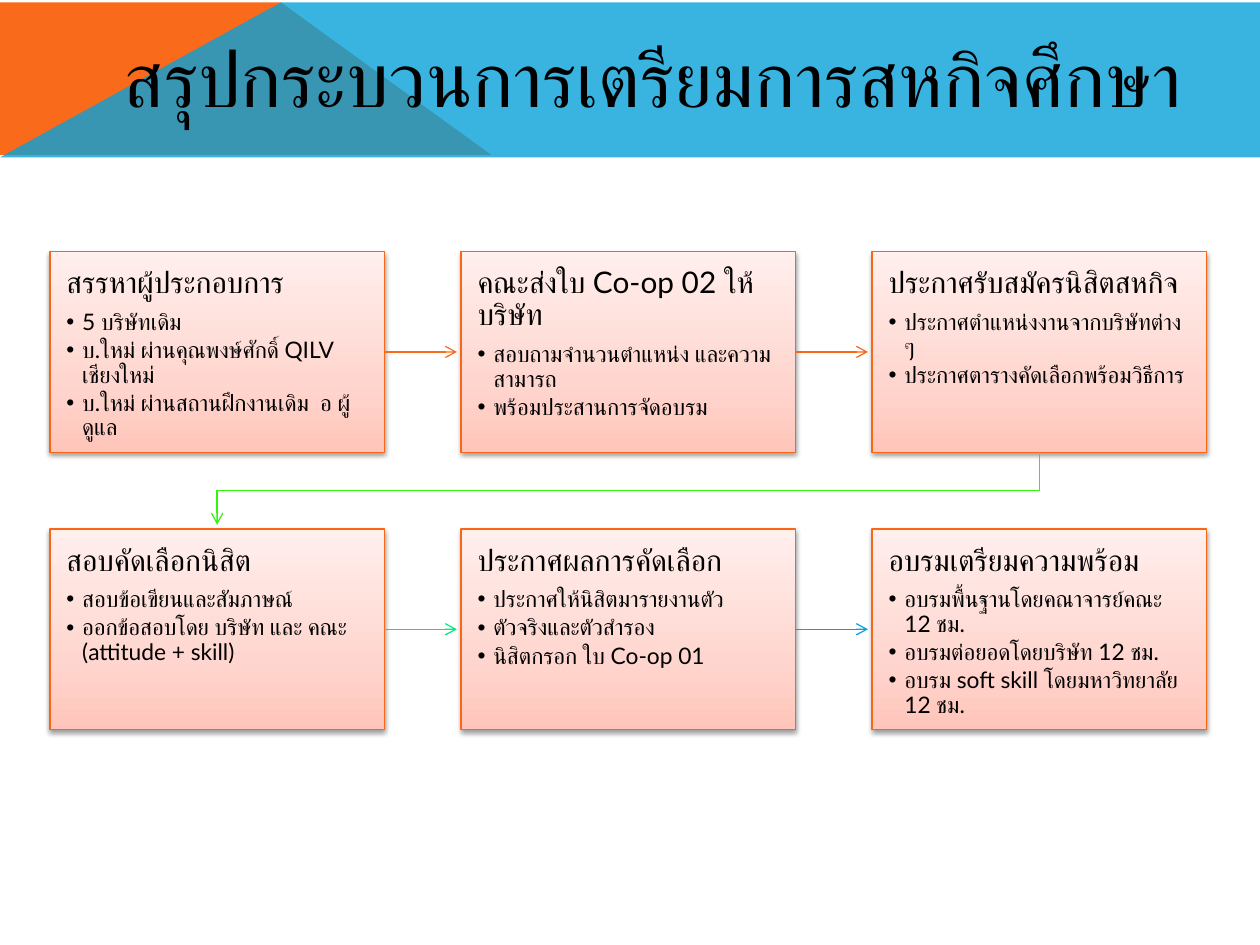
from lxml.etree import SubElement
from pptx import Presentation
from pptx.dml.color import RGBColor
from pptx.enum.shapes import MSO_CONNECTOR as Connector, MSO_SHAPE as Shape
from pptx.enum.text import MSO_ANCHOR as Anchor, PP_ALIGN as Align
from pptx.oxml.ns import qn
from pptx.util import Pt

RIGHT_SIDE = 3
LEFT, TOP, WIDTH, HEIGHT = 28.6, 143.8, 191, 114.6
COLUMN_STEP, ROW_STEP = 234.9, 158.5
ARROW_LENGTH = 41.5
GRADIENT = [(0, "FFC5BA"), (35, "FFD6CF"), (100, "FFEFED")]
HEADING_FORMAT = {"size": Pt(17), "name": "Lato"}
BULLET_FORMAT = {"size": Pt(13), "name": "Lato"}
TITLE_FORMAT = {"size": Pt(44), "name": "Lato"}
HEADING_SPACING = {"line_spacing": 0.9, "space_after": Pt(6), "alignment": Align.LEFT}
BULLET_SPACING = {"line_spacing": 0.9, "space_after": Pt(2), "alignment": Align.LEFT}
BOX_FRAME = {
    "word_wrap": True, "vertical_anchor": Anchor.TOP,
    "margin_left": Pt(9.4), "margin_right": Pt(9.4),
    "margin_top": Pt(9.4), "margin_bottom": Pt(9.4),
}

# Heading, bullets, and the colour of the arrow to the next step
STEPS = [
    ("สรรหาผู้ประกอบการ",
     ["5 บริษัทเดิม",
      "บ.ใหม่ ผ่านคุณพงษ์ศักดิ์ QILV เชียงใหม่",
      "บ.ใหม่ ผ่านสถานฝึกงานเดิม  อ ผู้ดูแล"], "F96A1B"),
    ("คณะส่งใบ Co-op 02 ให้บริษัท",
     ["สอบถามจำนวนตำแหน่ง และความสามารถ",
      "พร้อมประสานการจัดอบรม"], "F96615"),
    ("ประกาศรับสมัครนิสิตสหกิจ",
     ["ประกาศตำแหน่งงานจากบริษัทต่าง ๆ",
      "ประกาศตารางคัดเลือกพร้อมวิธีการ"], "34F308"),
    ("สอบคัดเลือกนิสิต",
     ["สอบข้อเขียนและสัมภาษณ์",
      "ออกข้อสอบโดย บริษัท และ คณะ (attitude + skill)"], "08E680"),
    ("ประกาศผลการคัดเลือก",
     ["ประกาศให้นิสิตมารายงานตัว",
      "ตัวจริงและตัวสำรอง",
      "นิสิตกรอก ใบ Co-op 01"], "08A1D9"),
    ("อบรมเตรียมความพร้อม",
     ["อบรมพื้นฐานโดยคณาจารย์คณะ 12 ชม.",
      "อบรมต่อยอดโดยบริษัท 12 ชม.",
      "อบรม soft skill โดยมหาวิทยาลัย 12 ชม."], None),
]


def color(value):
    return RGBColor.from_string(value)


def write(para, text, spacing, font_format):
    """Fill a paragraph with one black span in the given formats."""
    for name, value in spacing.items():
        setattr(para, name, value)
    span = para.add_run()
    span.text = text
    for name, value in font_format.items():
        setattr(span.font, name, value)
    span.font.color.rgb = color("000000")


deck = Presentation()
deck.slide_width, deck.slide_height = Pt(720), Pt(540)
page = deck.slides.add_slide(deck.slide_layouts[6])
shapes = page.shapes

# Header band: orange wedge under a translucent blue sheet
bands = [
    ("F96A1B", [(0, 88.6), (0, 1.4), (160.6, 1.4), (280.8, 88.6)]),
    ("08A1D9", [(0, 90), (160.6, 1.4), (720, 1.4), (720, 90)]),
]
for fill, points in bands:
    corners = [(Pt(x), Pt(y)) for x, y in points]
    builder = shapes.build_freeform(*corners[0], scale=1.0)
    builder.add_line_segments(corners[1:], close=True)
    band = builder.convert_to_shape()
    band.shadow.inherit = False
    band.fill.solid()
    band.fill.fore_color.rgb = color(fill)
    band.line.fill.background()
sheet_color = band.element.spPr.find(qn("a:solidFill")).find(qn("a:srgbClr"))
SubElement(sheet_color, qn("a:alpha"), val="80000")

# Step boxes, each followed by the arrow to the next one
for index, (heading, bullets, arrow_color) in enumerate(STEPS):
    row, column = divmod(index, 3)
    left, top = LEFT + column * COLUMN_STEP, TOP + row * ROW_STEP
    box = shapes.add_shape(Shape.RECTANGLE, Pt(left), Pt(top), Pt(WIDTH), Pt(HEIGHT))
    box.line.color.rgb = color("F96615")
    box.line.width = Pt(0.75)
    box.fill.gradient()
    box.fill.gradient_angle = 90
    stops = box.element.spPr.find(qn("a:gradFill")).find(qn("a:gsLst"))
    stops.clear()
    for position, stop_color in GRADIENT:
        stop = SubElement(stops, qn("a:gs"), pos=str(position * 1000))
        SubElement(stop, qn("a:srgbClr"), val=stop_color)
    box.shadow.inherit = False
    shadow = SubElement(box.element.spPr.find(qn("a:effectLst")), qn("a:outerShdw"),
                        blurRad=str(Pt(3.1)), dist=str(Pt(1.6)), dir="5400000", rotWithShape="0")
    shadow_color = SubElement(shadow, qn("a:srgbClr"), val="000000")
    SubElement(shadow_color, qn("a:alpha"), val="38000")

    frame = box.text_frame
    for name, value in BOX_FRAME.items():
        setattr(frame, name, value)
    write(frame.paragraphs[0], heading, HEADING_SPACING, HEADING_FORMAT)
    for bullet in bullets:
        para = frame.add_paragraph()
        para.level = 1
        write(para, bullet, BULLET_SPACING, BULLET_FORMAT)
        settings = para._p.get_or_add_pPr()
        settings.set("marL", str(Pt(9)))
        settings.set("indent", str(-Pt(9)))
        SubElement(settings, qn("a:buFont"), typeface="Arial")
        SubElement(settings, qn("a:buChar"), char="•")

    if arrow_color is None:
        continue
    if column < 2:
        start, middle = left + WIDTH, top + HEIGHT / 2
        arrow = shapes.add_connector(Connector.STRAIGHT, Pt(start), Pt(middle),
                                     Pt(start + ARROW_LENGTH), Pt(middle))
        arrow.begin_connect(box, RIGHT_SIDE)
        SubElement(arrow.element.spPr, qn("a:effectLst"))
    else:
        start_x, end_x = left + WIDTH / 2, LEFT + WIDTH / 2
        start_y, end_y = top + HEIGHT, top + ROW_STEP - 2.4
        bend_y = (top + HEIGHT + top + ROW_STEP) / 2
        builder = shapes.build_freeform(Pt(start_x), Pt(start_y), scale=1.0)
        builder.add_line_segments([(Pt(start_x), Pt(bend_y)), (Pt(end_x), Pt(bend_y)),
                                   (Pt(end_x), Pt(end_y))], close=False)
        arrow = builder.convert_to_shape()
        arrow.fill.background()
        arrow.shadow.inherit = False
    arrow.line.color.rgb = color(arrow_color)
    arrow.line.width = Pt(0.75)
    SubElement(arrow.element.spPr.find(qn("a:ln")), qn("a:tailEnd"),
               type="arrow", w="med", len="med")

title = shapes.add_textbox(Pt(54), Pt(15.1), Pt(637.9), Pt(56.9))
title.text_frame.word_wrap = True
title.text_frame.vertical_anchor = Anchor.MIDDLE
write(title.text_frame.paragraphs[0], "สรุปกระบวนการเตรียมการสหกิจศึกษา",
      {"alignment": Align.CENTER}, TITLE_FORMAT)

deck.save("out.pptx")
